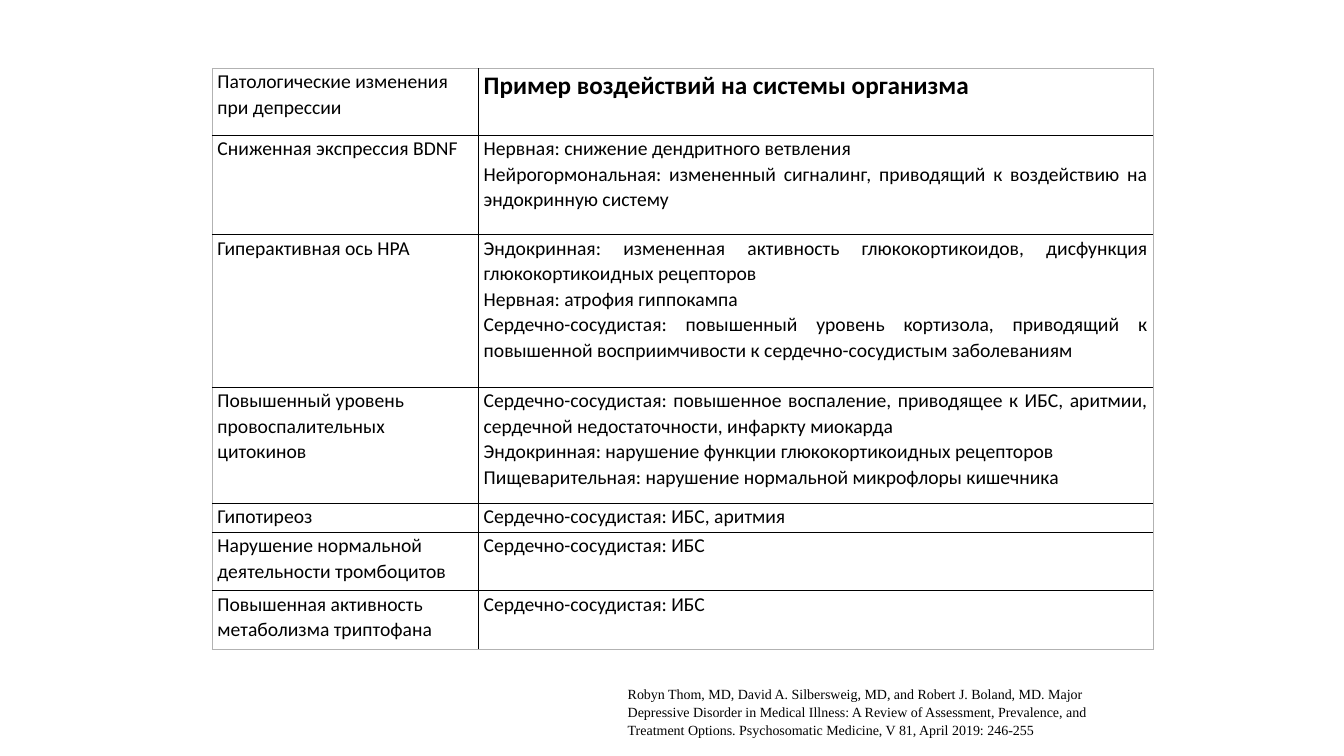
from lxml.etree import SubElement
from pptx import Presentation
from pptx.dml.color import RGBColor
from pptx.enum.text import MSO_ANCHOR, PP_ALIGN
from pptx.oxml.ns import qn
from pptx.util import Cm, Pt

COLORS = {"text": "000000", "paper": "FFFFFF", "inner": "000000", "outer": "B2B2B2"}

HEADER = ("Патологические изменения при депрессии", ["Пример воздействий на системы организма"])
EFFECTS = [
    ("Сниженная экспрессия BDNF", [
        "Нервная: снижение дендритного ветвления",
        "Нейрогормональная: измененный сигналинг, приводящий к воздействию на эндокринную систему",
    ]),
    ("Гиперактивная ось HPA", [
        "Эндокринная: измененная активность глюкокортикоидов, дисфункция глюкокортикоидных рецепторов",
        "Нервная: атрофия гиппокампа",
        "Сердечно-сосудистая: повышенный уровень кортизола, приводящий к повышенной "
        "восприимчивости к сердечно-сосудистым заболеваниям",
    ]),
    ("Повышенный уровень провоспалительных цитокинов", [
        "Сердечно-сосудистая: повышенное воспаление, приводящее к ИБС, аритмии, "
        "сердечной недостаточности, инфаркту миокарда",
        "Эндокринная: нарушение функции глюкокортикоидных рецепторов",
        "Пищеварительная: нарушение нормальной микрофлоры кишечника",
    ]),
    ("Гипотиреоз", ["Сердечно-сосудистая: ИБС, аритмия"]),
    ("Нарушение нормальной деятельности тромбоцитов", ["Сердечно-сосудистая: ИБС"]),
    ("Повышенная активность метаболизма триптофана", ["Сердечно-сосудистая: ИБС"]),
]
COL_WIDTHS = [6.71, 17.0]
ROW_HEIGHTS = [1.68, 2.51, 3.84, 2.92, 0.74, 1.47, 1.47]
CITATION = (
    "Robyn Thom, MD, David A. Silbersweig, MD, and Robert J. Boland, MD. Major Depressive "
    "Disorder in Medical Illness: A Review of Assessment, Prevalence, and Treatment Options. "
    "Psychosomatic Medicine, V 81, April 2019: 246-255"
)


class SlideBuilder:
    def __init__(self, prs):
        self.s = prs.slides.add_slide(prs.slide_layouts[6])

    def add_lines(self, tf, lines, size, font="Calibri", bold=False, align=PP_ALIGN.LEFT):
        for i, line in enumerate(lines):
            p = tf.add_paragraph() if i else tf.paragraphs[0]
            p.alignment = align
            p.line_spacing = 1.07
            r = p.add_run()
            r.text = line
            r.font.name = font
            r.font.size = Pt(size)
            r.font.bold = bold
            r.font.color.rgb = RGBColor.from_string(COLORS["text"])

    def border(self, cell, side, outer):
        ln = SubElement(cell._tc.get_or_add_tcPr(), qn(f"a:ln{side}"))
        ln.set("w", str(Pt(0.5 if outer else 1)))
        fill = SubElement(ln, qn("a:solidFill"))
        SubElement(fill, qn("a:srgbClr")).set("val", COLORS["outer" if outer else "inner"])

    def table(self, left, top, widths, heights, rows):
        frame = self.s.shapes.add_table(
            len(heights), len(widths), Cm(left), Cm(top), Cm(sum(widths)), Cm(sum(heights)))
        tbl = frame.table
        tbl.first_row = tbl.horz_banding = False
        for col, width in zip(tbl.columns, widths):
            col.width = Cm(width)
        for i, (cause, effects) in enumerate(rows):
            tbl.rows[i].height = Cm(heights[i])
            for j, lines in enumerate([[cause], effects]):
                cell = tbl.cell(i, j)
                cell.margin_left = cell.margin_right = Cm(0.13)
                cell.margin_top = cell.margin_bottom = 0
                cell.vertical_anchor = MSO_ANCHOR.TOP
                edges = {"L": j == 0, "R": j == len(widths) - 1,
                         "T": i == 0, "B": i == len(rows) - 1}
                for side, outer in edges.items():
                    self.border(cell, side, outer)
                cell.fill.solid()
                cell.fill.fore_color.rgb = RGBColor.from_string(COLORS["paper"])
                heading = i == 0 and j == 1
                self.add_lines(cell.text_frame, lines, 18 if heading else 14, bold=heading,
                               align=PP_ALIGN.JUSTIFY if j else PP_ALIGN.LEFT)

    def text(self, left, top, width, height, line, size, font):
        sp = self.s.shapes.add_textbox(Cm(left), Cm(top), Cm(width), Cm(height))
        tf = sp.text_frame
        tf.word_wrap = True
        self.add_lines(tf, [line], size, font)


def main():
    prs = Presentation()
    prs.slide_width, prs.slide_height = Cm(33.87), Cm(19.05)
    slide = SlideBuilder(prs)
    slide.table(5.35, 1.73, COL_WIDTHS, ROW_HEIGHTS, [HEADER] + EFFECTS)
    slide.text(15.57, 17.12, 12.7, 1.6, CITATION, 10, "Times New Roman")
    prs.save("out.pptx")


if __name__ == "__main__":
    main()
